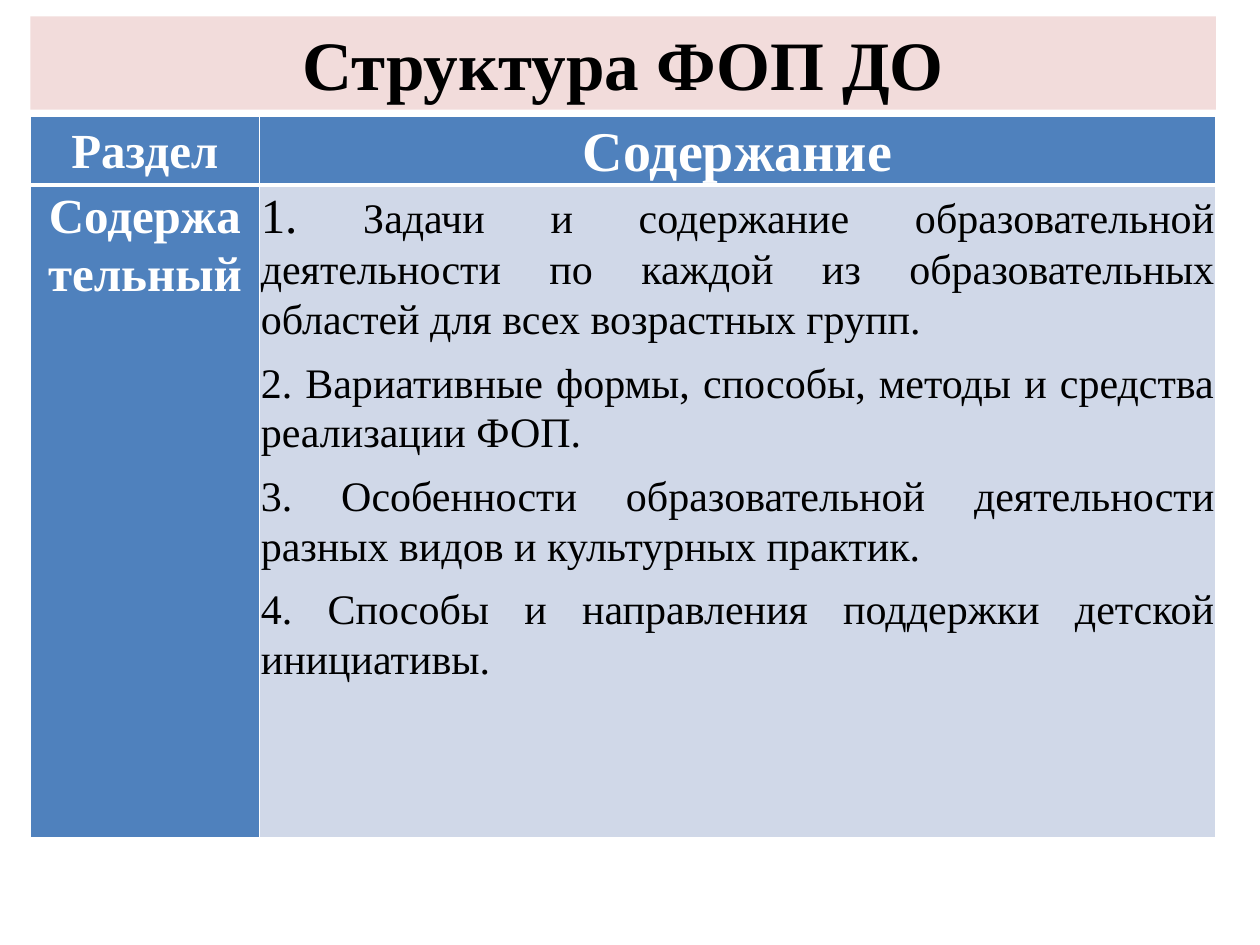
"""Build a slide with a title band and a table of the programme structure."""
from lxml import etree
from pptx import Presentation
from pptx.dml.color import RGBColor
from pptx.enum.shapes import MSO_SHAPE
from pptx.enum.text import MSO_ANCHOR, PP_ALIGN
from pptx.oxml.ns import qn
from pptx.util import Inches, Pt

RECTANGLE = MSO_SHAPE.RECTANGLE
TOP, MIDDLE = MSO_ANCHOR.TOP, MSO_ANCHOR.MIDDLE
CENTER, JUSTIFY = PP_ALIGN.CENTER, PP_ALIGN.JUSTIFY
FONT = "Times New Roman"
WHITE, BLACK, BLUE, PALE_BLUE, PINK = "FFFFFF", "000000", "4F81BD", "D0D8E8", "F2DCDB"
LEFT, WIDTH = Inches(0.24), Inches(9.41)


def format_run(run, size, color, bold):
    run.font.name = FONT
    run.font.size = Pt(size)
    run.font.bold = bold
    run.font.color.rgb = RGBColor.from_string(color)


def add_border(cell, side, points):
    properties = cell._tc.get_or_add_tcPr()
    line = etree.SubElement(properties, qn(f"a:ln{side}"), w=str(Pt(points)))
    fill = etree.SubElement(line, qn("a:solidFill"))
    etree.SubElement(fill, qn("a:srgbClr"), val=WHITE)


presentation = Presentation()
presentation.slide_width = Inches(10)
presentation.slide_height = Inches(7.5)
slide = presentation.slides.add_slide(presentation.slide_layouts[6])

title = slide.shapes.add_shape(RECTANGLE, LEFT, Inches(0.13), WIDTH, Inches(0.74))
title.shadow.inherit = False
title.fill.solid()
title.fill.fore_color.rgb = RGBColor.from_string(PINK)
title.line.fill.background()
title.text_frame.text = "Структура ФОП ДО"
title.text_frame.vertical_anchor = MIDDLE
title_paragraph = title.text_frame.paragraphs[0]
title_paragraph.alignment = CENTER
format_run(title_paragraph.runs[0], 39.6, BLACK, True)

table = slide.shapes.add_table(2, 2, LEFT, Inches(0.92), WIDTH, Inches(5.31)).table
for column, width in zip(table.columns, (1.82, 7.59)):
    column.width = Inches(width)
for row, height in zip(table.rows, (0.13, 5.18)):
    row.height = Inches(height)

contents = [
    "1. Задачи и содержание образовательной деятельности по каждой из "
    "образовательных областей для всех возрастных групп.",
    "2. Вариативные формы, способы, методы и средства реализации ФОП.",
    "3. Особенности образовательной деятельности разных видов и культурных практик.",
    "4. Способы и направления поддержки детской инициативы.",
]
cells = [
    (0, 0, ["Раздел"], 28, MIDDLE),
    (0, 1, ["Содержание"], 32, MIDDLE),
    (1, 0, ["Содержа", "тельный"], 28, TOP),
    (1, 1, contents, 24, TOP),
]
for row, column, lines, size, anchor in cells:
    cell = table.cell(row, column)
    is_body = (row, column) == (1, 1)
    for side in "LRTB":
        add_border(cell, side, 3 if (row, side) in ((0, "B"), (1, "T")) else 1)
    cell.fill.solid()
    cell.fill.fore_color.rgb = RGBColor.from_string(PALE_BLUE if is_body else BLUE)
    cell.vertical_anchor = anchor
    cell.margin_left = cell.margin_right = Inches(0.01)
    cell.margin_top = cell.margin_bottom = Inches(0.01)
    cell.text_frame.text = "\n".join(lines)
    for paragraph in cell.text_frame.paragraphs:
        paragraph.alignment = JUSTIFY if is_body else CENTER
        paragraph.line_spacing = 1.07
        if is_body:
            paragraph.space_after = Pt(8)
        format_run(paragraph.runs[0], size, BLACK if is_body else WHITE, not is_body)

first_item = table.cell(1, 1).text_frame.paragraphs[0]
number, rest = first_item.runs[0], first_item.add_run()
number.text, rest.text = "1.", contents[0].removeprefix("1.")
format_run(number, 28, BLACK, False)
format_run(rest, 24, BLACK, False)

presentation.save("out.pptx")
